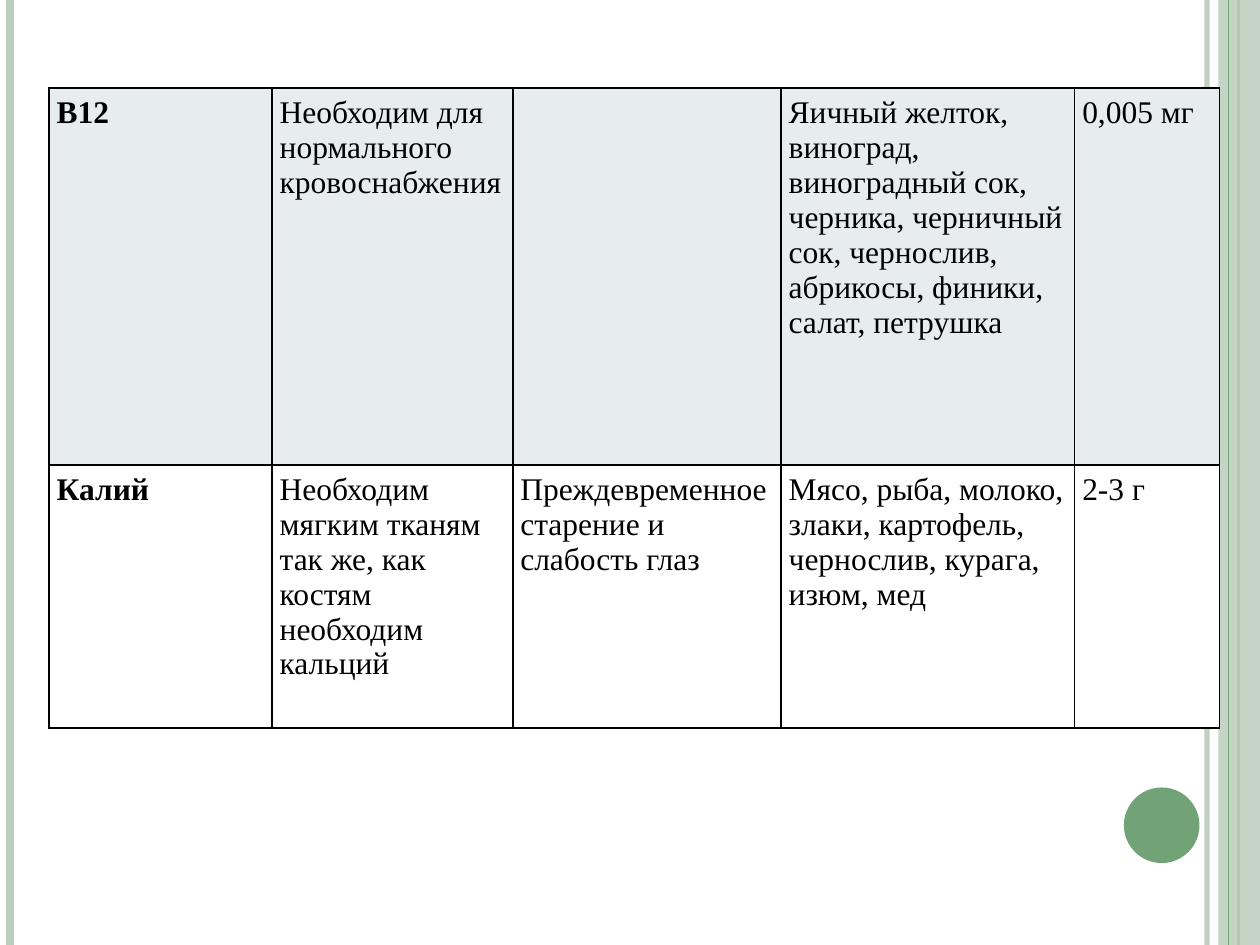
from lxml import etree
from pptx import Presentation, util as u
from pptx.dml.color import RGBColor
from pptx.enum import shapes
from pptx.oxml import parse_xml
from pptx.oxml.ns import nsdecls, qn

PALE_GREEN = RGBColor(0xBC, 0xCE, 0xBD)
GREEN = RGBColor(0x72, 0xA3, 0x76)
BLACK = RGBColor(0, 0, 0)
ROW_FILLS = [RGBColor(0xE7, 0xEC, 0xEF), RGBColor(0xFF, 0xFF, 0xFF)]

WIDTH, HEIGHT = 10, 7.5
TABLE_LEFT, TABLE_TOP = 0.39, 0.7
COLUMN_WIDTHS = [1.77, 1.91, 2.13, 2.33, 1.15]
ROW_HEIGHTS = [2.99, 2.09]
ROWS = [
    ("В12\u00a0", "Необходим для нормального кровоснабжения", "",
     "Яичный желток, виноград, виноградный сок, черника, черничный сок, "
     "чернослив, абрикосы, финики, салат, петрушка", "0,005 мг"),
    ("Калий\u00a0", "Необходим мягким тканям так же, как костям необходим кальций",
     "Преждевременное старение и слабость глаз",
     "Мясо, рыба, молоко, злаки, картофель, чернослив, курага, изюм, мед", "2-3 г"),
]
BACK_STRIPES = [(9.58, PALE_GREEN, 3, 93), (0.08, PALE_GREEN, 4.5, 100),
                (9.83, GREEN, 1.5, 100)]
FRONT_STRIPES = [(9.75, GREEN, 0.75, 100)]


def set_opacity(fill, percent):
    color = fill._xPr.find(qn("a:solidFill"))[0]
    etree.SubElement(color, qn("a:alpha"), val=str(percent * 1000))


def add_stripes(page, stripes):
    for x, color, weight, opacity in stripes:
        stripe = page.shapes.add_connector(
            shapes.MSO_CONNECTOR.STRAIGHT,
            u.Inches(x), 0, u.Inches(x), u.Inches(HEIGHT))
        stripe.line.color.rgb = color
        stripe.line.width = u.Pt(weight)
        if opacity < 100:
            set_opacity(stripe.line.fill, opacity)
        etree.SubElement(stripe._element.spPr, qn("a:effectLst"))


def add_solid(page, kind, left, top, width, height, color):
    solid = page.shapes.add_shape(kind, *map(u.Inches, (left, top, width, height)))
    solid.shadow.inherit = False
    solid.fill.solid()
    solid.fill.fore_color.rgb = color
    solid.line.fill.background()
    return solid


def add_borders(cell):
    properties = cell._tc.get_or_add_tcPr()
    for position, side in enumerate(("lnL", "lnR", "lnT", "lnB")):
        properties.insert(position, parse_xml(
            f'<a:{side} {nsdecls("a")} w="12700"><a:solidFill>'
            f'<a:srgbClr val="{BLACK}"/></a:solidFill></a:{side}>'))


def fill_cell(cell, content, color, bold):
    cell.margin_left = cell.margin_right = u.Inches(0.06)
    cell.margin_top = cell.margin_bottom = u.Inches(0.06)
    cell.fill.solid()
    cell.fill.fore_color.rgb = color
    add_borders(cell)
    cell.text = content
    font = cell.text_frame.paragraphs[0].font
    font.name = "Times New Roman"
    font.size = u.Pt(18)
    font.bold = bold
    font.color.rgb = BLACK


def add_vitamin_table(page):
    table = page.shapes.add_table(
        len(ROWS), len(COLUMN_WIDTHS), u.Inches(TABLE_LEFT), u.Inches(TABLE_TOP),
        u.Inches(sum(COLUMN_WIDTHS)), u.Inches(sum(ROW_HEIGHTS))).table
    table.first_row = table.horz_banding = False
    for column, width in zip(table.columns, COLUMN_WIDTHS):
        column.width = u.Inches(width)
    for row, height, contents, color in zip(table.rows, ROW_HEIGHTS, ROWS, ROW_FILLS):
        row.height = u.Inches(height)
        for index, content in enumerate(contents):
            fill_cell(row.cells[index], content, color, index == 0)


def main():
    deck = Presentation()
    deck.slide_width, deck.slide_height = u.Inches(WIDTH), u.Inches(HEIGHT)
    page = deck.slides.add_slide(deck.slide_layouts[6])
    add_stripes(page, BACK_STRIPES)
    band = add_solid(page, shapes.MSO_SHAPE.RECTANGLE, 9.67, 0, 0.33, HEIGHT, PALE_GREEN)
    set_opacity(band.fill, 87)
    add_stripes(page, FRONT_STRIPES)
    add_solid(page, shapes.MSO_SHAPE.OVAL, 8.92, 6.25, 0.6, 0.6, GREEN)
    add_vitamin_table(page)
    deck.save("out.pptx")


if __name__ == "__main__":
    main()
